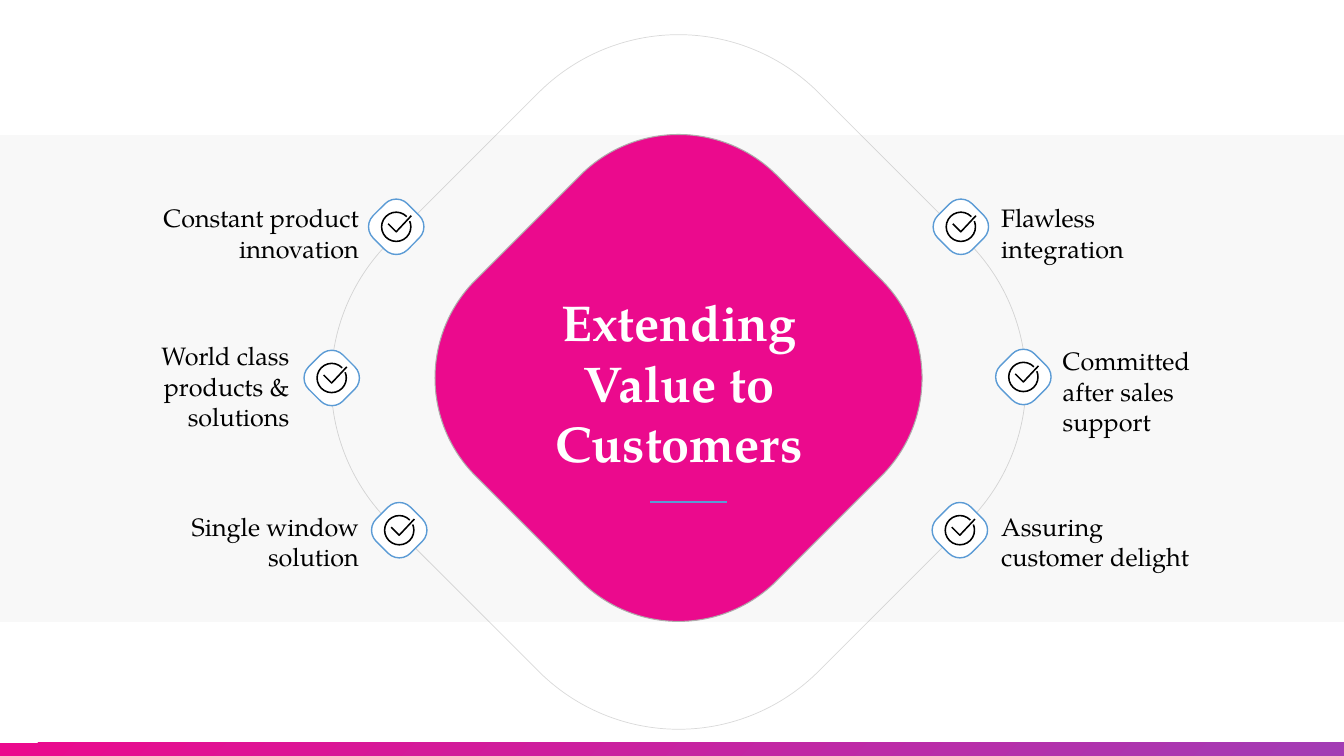
"""Build the customer value slide."""
from dataclasses import dataclass

import pptx
import pptx.dml.color
import pptx.enum.dml
import pptx.enum.shapes
import pptx.enum.text
import pptx.oxml
import pptx.oxml.ns
import pptx.util
from pptx.util import Inches

TITLE = "Extending Value to Customers"
LEFT = [
    ("Constant product innovation", (3.93, 2.25), (1.35, 2.01, 2.21, 0.61)),
    ("World class products & solutions", (3.29, 3.75), (1.17, 3.38, 1.7, 0.91)),
    ("Single window solution", (3.96, 5.26), (1.86, 5.07, 1.7, 0.61)),
]
RIGHT = [
    ("Flawless integration", (9.53, 2.25), (9.93, 2.01, 1.7, 0.61)),
    ("Committed after sales support", (10.15, 3.74), (10.54, 3.43, 1.7, 0.91)),
    ("Assuring customer delight", (9.52, 5.26), (9.93, 5.07, 1.94, 0.61)),
]
HUB, HALO = (6.73, 3.75), (6.73, 3.79)
RING, CORE, BADGE, DIAL = 6.89, 4.83, 0.55, 0.29
TICK = [(-0.08, -0.03), (0, 0.05), (0.15, -0.11)]


@dataclass
class Theme:
    """Colours, font and type sizes."""
    font: str = "TeX Gyre Pagella"
    pink: str = "EB0A8D"
    violet: str = "A33CB4"
    blue: str = "5B9BD5"
    gray: str = "AFABAB"
    pale: str = "F8F8F8"
    white: str = "FFFFFF"
    black: str = "000000"
    head: int = 36
    body: int = 18


theme = Theme()
ALIGN = pptx.enum.text.PP_ALIGN
SHAPE = pptx.enum.shapes.MSO_SHAPE


def rgb(code):
    """Turn a hex code into a colour."""
    return pptx.dml.color.RGBColor.from_string(code)


def paint(shape, fill, line, width):
    """Set the fill and line of a shape and drop its shadow."""
    shape.shadow.inherit = False
    if fill:
        shape.fill.solid()
        shape.fill.fore_color.rgb = rgb(fill)
    else:
        shape.fill.background()
    shape.line.color.rgb = rgb(line)
    shape.line.width = pptx.util.Pt(width)


def center(slide, kind, mid, size):
    """Add a square preset shape around a point."""
    area = (mid[0] - size / 2, mid[1] - size / 2, size, size)
    return slide.shapes.add_shape(kind, *map(Inches, area))


def gem(slide, mid, size, fill, line, width):
    """Draw a diamond with round corners, as wide as size."""
    shape = center(slide, SHAPE.ROUNDED_RECTANGLE, mid, size / 1.144)
    shape.adjustments[0] = 0.326
    shape.rotation = 45
    paint(shape, fill, line, width)
    return shape


def check(slide, mid):
    """Draw a tick in an open ring."""
    ring = center(slide, SHAPE.ARC, mid, DIAL)
    for i, angle in enumerate((337, 316)):
        ring.adjustments[i] = angle * 0.6
    points = [(Inches(mid[0] + x), Inches(mid[1] + y)) for x, y in TICK]
    pen = slide.shapes.build_freeform(*points[0])
    pen.add_line_segments(points[1:], close=False)
    for shape in (ring, pen.convert_to_shape()):
        paint(shape, None, theme.black, 1.1)


def write(shape, text, size, color, align, bold=False):
    """Fill a text shape that has no insets."""
    frame = shape.text_frame
    frame.text = text
    frame.word_wrap = True
    frame.auto_size = pptx.enum.text.MSO_AUTO_SIZE.NONE
    frame.vertical_anchor = pptx.enum.text.MSO_ANCHOR.TOP
    frame.margin_left = frame.margin_right = frame.margin_top = frame.margin_bottom = 0
    para = frame.paragraphs[0]
    para.alignment = align
    para.font.name = theme.font
    para.font.size = pptx.util.Pt(size)
    para.font.bold = bold
    para.font.color.rgb = rgb(color)


def strip(slide, top, height):
    """Add a full-width rectangle with no line."""
    area = map(Inches, (0, top, 13.33, height))
    shape = slide.shapes.add_shape(SHAPE.RECTANGLE, *area)
    shape.shadow.inherit = False
    shape.line.fill.background()
    return shape


def back(slide):
    """Draw the bottom bar, the band and the large diamonds."""
    fill = strip(slide, 7.37, 0.13).fill
    fill.gradient()
    fill.gradient_angle = 315
    for stop, code in zip(fill.gradient_stops, (theme.pink, theme.violet)):
        stop.color.rgb = rgb(code)
    fill = strip(slide, 1.33, 4.84).fill
    fill.patterned()
    fill.pattern = pptx.enum.dml.MSO_PATTERN.DARK_HORIZONTAL
    fill.fore_color.rgb = rgb(theme.pale)
    fill.back_color.rgb = rgb(theme.white)
    ring = gem(slide, HALO, RING, None, theme.black, 0.5)
    tint = ring._element.spPr.find(".//" + pptx.oxml.ns.qn("a:srgbClr"))
    tint.append(pptx.oxml.parse_xml(f'<a:alpha {pptx.oxml.ns.nsdecls("a")} val="15000"/>'))
    gem(slide, HUB, CORE, theme.pink, theme.gray, 0.75)


def main():
    """Build and save the slide."""
    deck = pptx.Presentation()
    deck.slide_width, deck.slide_height = Inches(13.33), Inches(7.5)
    slide = deck.slides.add_slide(deck.slide_layouts[5])
    back(slide)
    for items, align in ((RIGHT, ALIGN.LEFT), (LEFT, ALIGN.RIGHT)):
        for text, mid, area in items:
            box = slide.shapes.add_textbox(*map(Inches, area))
            write(box, text, theme.body, theme.black, align)
            gem(slide, mid, BADGE, theme.white, theme.blue, 1)
            check(slide, mid)
    title = slide.shapes.title
    title.left, title.top, title.width, title.height = map(Inches, (4.94, 2.89, 3.59, 1.82))
    write(title, TITLE, theme.head, theme.white, ALIGN.CENTER, True)
    slide.shapes._spTree.append(title._element)
    kind = pptx.enum.shapes.MSO_CONNECTOR.STRAIGHT
    rule = slide.shapes.add_connector(kind, *map(Inches, (6.45, 4.98, 7.21, 4.98)))
    rule.line.color.rgb = rgb(theme.blue)
    rule.line.width = pptx.util.Pt(2)
    plain = pptx.oxml.parse_xml(f'<a:effectLst {pptx.oxml.ns.nsdecls("a")}/>')
    rule._element.spPr.append(plain)
    deck.save("out.pptx")


if __name__ == "__main__":
    main()
